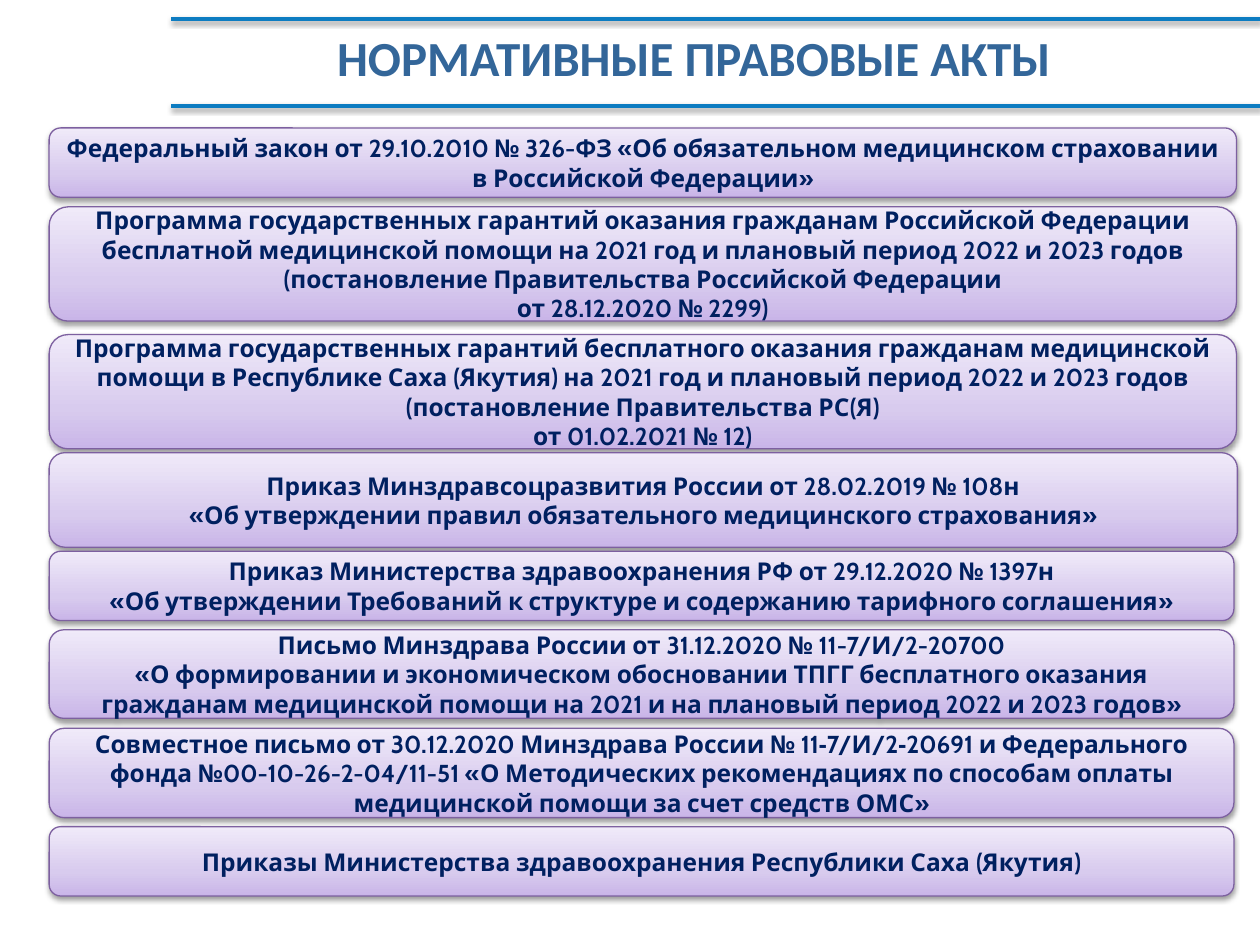
from dataclasses import dataclass

import copy

import lxml.etree
import pptx
import pptx.dml.color
import pptx.enum.shapes
import pptx.enum.text
import pptx.oxml.ns
import pptx.util

Pt = pptx.util.Pt
qn = pptx.oxml.ns.qn

COLORS = {
    "rule": "0D7CC1",
    "title": "336699",
    "text": "002060",
    "border": "7D60A0",
    "shadow": "000000",
    "card_bottom": "C9B5E8",
    "card_middle": "D8CBEE",
    "card_top": "F0EAF9",
}
GRADIENT = ((0, "card_bottom"), (0.35, "card_middle"), (1, "card_top"))
CARD_LEFT = 28.1


@dataclass
class Card:
    top: float
    width: float
    height: float
    text: str  # "\n" starts a paragraph, "\v" a line


CARDS = [
    Card(73.1, 678.5, 39.6,
         "Федеральный закон от 29.10.2010 № 326-ФЗ «Об обязательном медицинском "
         "страховании в Российской Федерации»"),
    Card(118.2, 678.5, 65.3,
         "Программа государственных гарантий оказания гражданам Российской Федерации "
         "бесплатной медицинской помощи на 2021 год и плановый период 2022 и 2023 годов "
         "(постановление Правительства Российской Федерации\vот 28.12.2020 № 2299)"),
    Card(191.2, 678.5, 65.3,
         "Программа государственных гарантий бесплатного оказания гражданам медицинской "
         "помощи в Республике Саха (Якутия) на 2021 год и плановый период 2022 и 2023 годов "
         "(постановление Правительства РС(Я)\vот 01.02.2021 № 12)"),
    Card(258.7, 679, 54,
         "Приказ Минздравсоцразвития России от 28.02.2019 № 108н\n"
         "«Об утверждении правил обязательного медицинского страхования»"),
    Card(315, 677, 39.6,
         "Приказ Министерства здравоохранения РФ от 29.12.2020 № 1397н\v"
         "«Об утверждении Требований к структуре и содержанию тарифного соглашения»"),
    Card(359.9, 677, 50.6,
         "Письмо Минздрава России от 31.12.2020 № 11-7/И/2-20700\n"
         "«О формировании и экономическом обосновании ТПГГ бесплатного оказания "
         "гражданам медицинской помощи на 2021 и на плановый период 2022 и 2023 годов»"),
    Card(416.2, 677, 51,
         "Совместное письмо от 30.12.2020 Минздрава России № 11‑7/И/2‑20691 и Федерального "
         "фонда №00-10-26-2-04/11-51 «О Методических рекомендациях по способам оплаты "
         "медицинской помощи за счет средств ОМС»"),
    Card(472.4, 677, 39.6,
         "Приказы Министерства здравоохранения Республики Саха (Якутия)"),
]


def rgb(name: str) -> pptx.dml.color.RGBColor:
    return pptx.dml.color.RGBColor.from_string(COLORS[name])


def add_shadow(spPr) -> None:
    """Soft shadow straight below; call after fill and line are set."""
    effects = lxml.etree.SubElement(spPr, qn("a:effectLst"))
    shadow = lxml.etree.SubElement(
        effects, qn("a:outerShdw"), blurRad=str(Pt(3.1)), dist=str(Pt(1.6)),
        dir="5400000", rotWithShape="0")
    color = lxml.etree.SubElement(shadow, qn("a:srgbClr"), val=COLORS["shadow"])
    lxml.etree.SubElement(color, qn("a:alpha"), val="38000")


def style_text(tf, font: str, size: float, color: str) -> None:
    tf.word_wrap = True
    for p in tf.paragraphs:
        p.alignment = pptx.enum.text.PP_ALIGN.CENTER
        p.font.name = font
        p.font.size = Pt(size)
        p.font.bold = True
        p.font.color.rgb = rgb(color)


def add_rule(s, y: float) -> None:
    line = s.shapes.add_connector(
        pptx.enum.shapes.MSO_CONNECTOR.STRAIGHT, Pt(98), Pt(y), Pt(720), Pt(y))
    line.line.color.rgb = rgb("rule")
    line.line.width = Pt(2)
    add_shadow(line._element.spPr)


def add_title(s, text: str) -> None:
    sp = s.shapes.add_textbox(Pt(92.2), Pt(17.3), Pt(608.4), Pt(36))
    tf = sp.text_frame
    tf.text = text
    tf.auto_size = pptx.enum.text.MSO_AUTO_SIZE.SHAPE_TO_FIT_TEXT
    tf.paragraphs[0].line_spacing = 0.85
    style_text(tf, "Calibri", 28, "title")


def add_card(s, card: Card) -> None:
    sp = s.shapes.add_shape(
        pptx.enum.shapes.MSO_SHAPE.ROUNDED_RECTANGLE,
        Pt(CARD_LEFT), Pt(card.top), Pt(card.width), Pt(card.height))
    # Three-stop gradient, dark at the bottom
    sp.fill.gradient()
    sp.fill.gradient_angle = 90
    stops = sp._element.spPr.find(".//" + qn("a:gsLst"))
    stops.append(copy.deepcopy(stops[0]))
    for stop, (position, color) in zip(sp.fill.gradient_stops, GRADIENT):
        stop.position = position
        stop.color.rgb = rgb(color)
    sp.line.color.rgb = rgb("border")
    sp.line.width = Pt(0.75)
    add_shadow(sp._element.spPr)
    tf = sp.text_frame
    tf.text = card.text
    tf.vertical_anchor = pptx.enum.text.MSO_ANCHOR.MIDDLE
    style_text(tf, "Cabin", 14, "text")


def main() -> None:
    prs = pptx.Presentation()
    prs.slide_width, prs.slide_height = Pt(720), Pt(540)
    s = prs.slides.add_slide(prs.slide_layouts[6])

    # Heading between two rules
    add_title(s, "НОРМАТИВНЫЕ ПРАВОВЫЕ АКТЫ")
    for y in (10.8, 60.5):
        add_rule(s, y)

    # List of legal acts
    for card in CARDS:
        add_card(s, card)

    prs.save("out.pptx")


if __name__ == "__main__":
    main()
